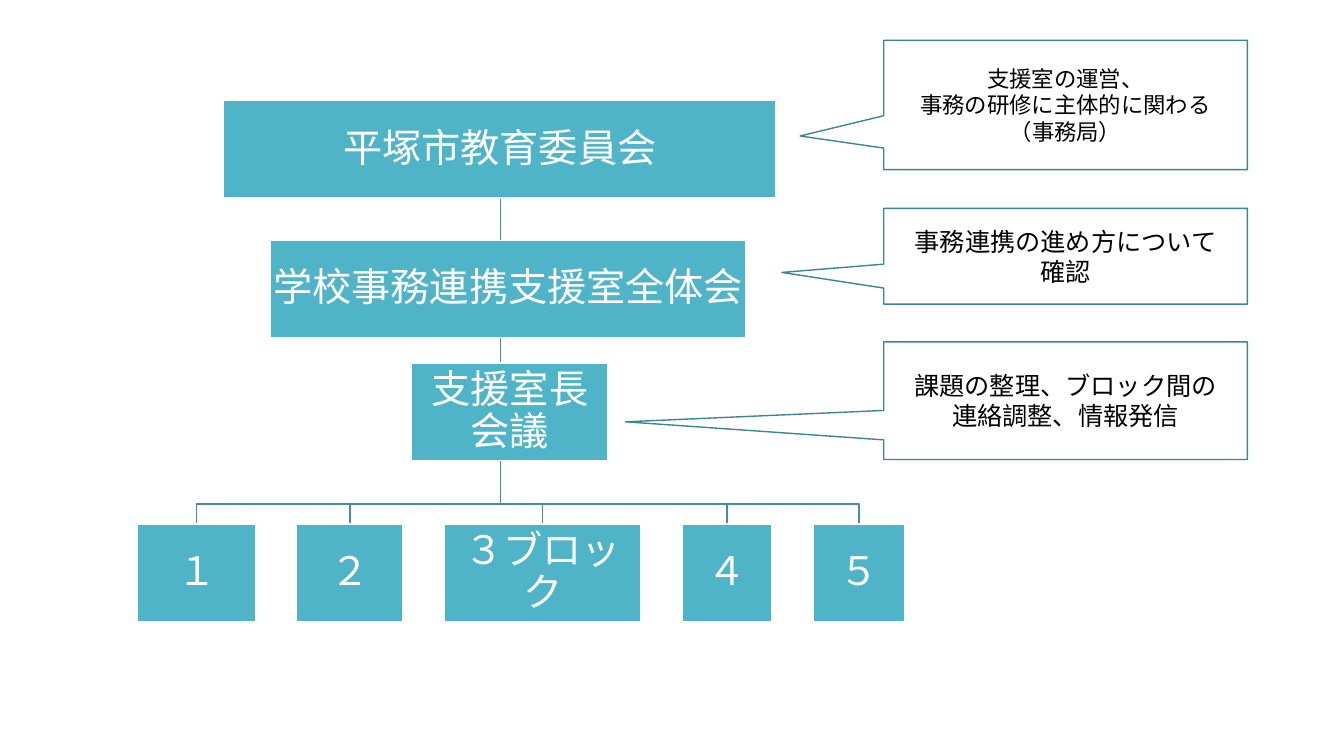
from pptx import Presentation
from pptx.dml.color import RGBColor
from pptx.enum.shapes import MSO_SHAPE
from pptx.enum.text import MSO_ANCHOR, PP_ALIGN
from pptx.util import Inches, Pt

RECTANGLE = MSO_SHAPE.RECTANGLE
CALLOUT = MSO_SHAPE.RECTANGULAR_CALLOUT
MIDDLE = MSO_ANCHOR.MIDDLE
CENTER = PP_ALIGN.CENTER

TEAL = RGBColor(0x50, 0xB4, 0xC8)
BRANCH_TEAL = RGBColor(0x40, 0x90, 0xA0)
DARK_TEAL = RGBColor(0x3B, 0x85, 0x94)
WHITE = RGBColor(0xFF, 0xFF, 0xFF)
BLACK = RGBColor(0x00, 0x00, 0x00)

COLUMNS, ROWS = 16, 9
BOX_HEIGHT = 1.16
TRUNK, BRANCH_ROW, BLOCK_ROW = 5.96, 6, 6.24
FIRST_BLOCK, BLOCK_GAP = 1.64, 0.49
CALLOUT_LEFT, CALLOUT_WIDTH = 10.52, 4.33

# text, left, top, width
LEVELS = [
    ("平塚市教育委員会", 2.66, 1.2, 6.58),
    ("学校事務連携支援室全体会", 3.22, 2.86, 5.66),
    ("支援室長会議", 4.9, 4.32, 2.34),
]
# text, width
BLOCKS = [("１", 1.4), ("２", 1.27), ("３ブロック", 2.34), ("４", 1.07), ("５", 1.09)]
# text, top, height, text size, pointer tip
CALLOUTS = [
    ("支援室の運営、\n事務の研修に主体的に関わる\n（事務局）", 0.48, 1.54, 16, (-0.73, 0.24)),
    ("事務連携の進め方について\n確認", 2.48, 1.14, 18, (-0.78, 0.17)),
    ("課題の整理、ブロック間の\n連絡調整、情報発信", 4.07, 1.4, 18, (-1.21, 0.18)),
]


class OrganisationPage:
    """Draws on one slide; every length is in grid columns or rows."""

    font = "Calibri"

    def __init__(self, deck):
        self.page = deck.slides.add_slide(deck.slide_layouts[6])
        self.column = deck.slide_width / COLUMNS
        self.row = deck.slide_height / ROWS

    def point(self, column, row):
        return round(column * self.column), round(row * self.row)

    def label(self, shape, text, size, color, spacing):
        frame = shape.text_frame
        frame.text = text
        frame.word_wrap = True
        frame.vertical_anchor = MIDDLE
        for para in frame.paragraphs:
            para.alignment = CENTER
            para.line_spacing = spacing
            for span in para.runs:
                span.font.name = self.font
                span.font.size = Pt(size)
                span.font.color.rgb = color

    def panel(self, kind, left, top, width, height, fill, line):
        shape = self.page.shapes.add_shape(
            kind, *self.point(left, top), *self.point(width, height))
        shape.shadow.inherit = False
        shape.fill.solid()
        shape.fill.fore_color.rgb = fill
        shape.line.color.rgb = line
        shape.line.width = Pt(1)
        return shape

    def box(self, text, left, top, width):
        box = self.panel(RECTANGLE, left, top, width, BOX_HEIGHT, TEAL, WHITE)
        frame = box.text_frame
        frame.margin_left = frame.margin_right = Inches(0.02)
        frame.margin_top = frame.margin_bottom = Inches(0.02)
        self.label(box, text, 28, WHITE, 0.9)

    def callout(self, text, top, height, size, tip):
        callout = self.panel(CALLOUT, CALLOUT_LEFT, top, CALLOUT_WIDTH, height,
                             WHITE, DARK_TEAL)
        callout.adjustments[0], callout.adjustments[1] = tip
        self.label(callout, text, size, BLACK, 1.0)

    def branch(self, start_row, center):
        """Runs an elbow line from the trunk down to a block's center."""
        builder = self.page.shapes.build_freeform(*self.point(TRUNK, start_row))
        corners = [(TRUNK, BRANCH_ROW), (center, BRANCH_ROW), (center, BLOCK_ROW)]
        builder.add_line_segments([self.point(*corner) for corner in corners], close=False)
        elbow = builder.convert_to_shape()
        elbow.shadow.inherit = False
        elbow.fill.background()
        elbow.line.color.rgb = BRANCH_TEAL
        elbow.line.width = Pt(1)


def place_blocks():
    """Returns text, left, top and width of each block, equally spaced."""
    placed, left = [], FIRST_BLOCK
    for text, width in BLOCKS:
        placed.append((text, left, BLOCK_ROW, width))
        left += width + BLOCK_GAP
    return placed


def main():
    deck = Presentation()
    deck.slide_width, deck.slide_height = Inches(13.33), Inches(7.5)
    chart = OrganisationPage(deck)
    blocks = place_blocks()
    trunk_start = LEVELS[0][2] + BOX_HEIGHT
    for _, left, _, width in blocks:
        chart.branch(trunk_start, left + width / 2)
    for box in LEVELS + blocks:
        chart.box(*box)
    for callout in CALLOUTS:
        chart.callout(*callout)
    deck.save("out.pptx")


if __name__ == "__main__":
    main()
